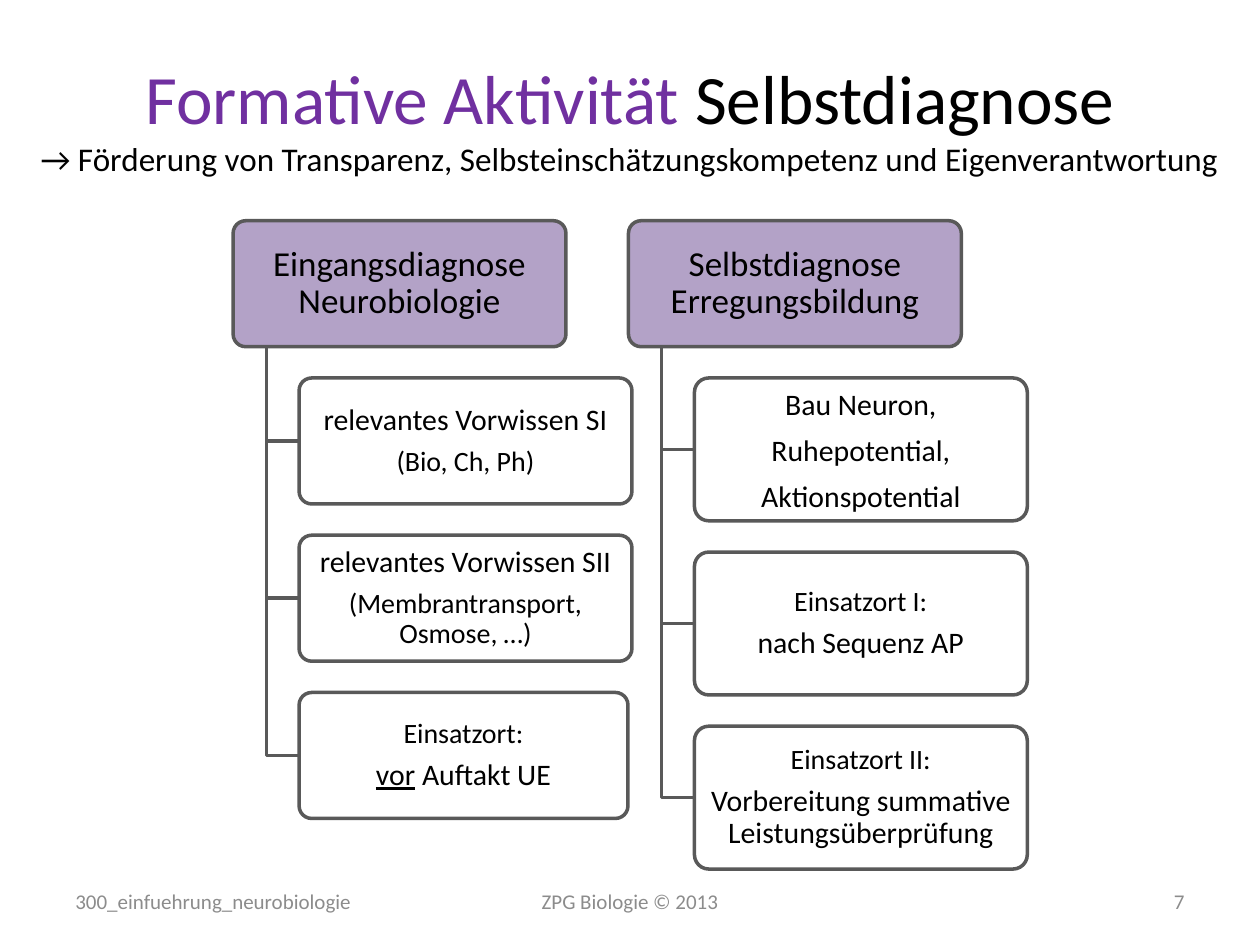
from dataclasses import dataclass
from typing import Optional

from lxml import etree
from pptx import Presentation
from pptx import util as u
from pptx.dml.color import RGBColor
from pptx.enum import shapes, text
from pptx.oxml.ns import qn


@dataclass(frozen=True)
class Theme:
    font: str = "Calibri"
    accent: RGBColor = RGBColor(0x70, 0x30, 0xA0)
    ink: RGBColor = RGBColor(0, 0, 0)
    white: RGBColor = RGBColor(0xFF, 0xFF, 0xFF)
    header_fill: RGBColor = RGBColor(0xB3, 0xA2, 0xC7)
    outline: RGBColor = RGBColor(0x59, 0x59, 0x59)
    footer: RGBColor = RGBColor(0x8C, 0x8C, 0x8C)
    title_size: float = 39.6
    subtitle_size: float = 18.9
    header_size: float = 20
    main_size: float = 17
    detail_size: float = 16
    footer_size: float = 12


THEME = Theme()


@dataclass(frozen=True)
class Line:
    words: str
    size: float = THEME.main_size
    underlined: str = ""  # leading words that are underlined


@dataclass(frozen=True)
class Item:
    lines: list[Line]
    width: float = 6.71
    line_spacing: Optional[float] = 0.9


@dataclass(frozen=True)
class Branch:
    left: float
    header: str
    item_height: float
    items: list[Item]


@dataclass(frozen=True)
class Footer:
    words: str
    left: float
    width: float
    alignment: text.PP_ALIGN


# Diagram grid in centimetres
TOP, HEADER_WIDTH, HEADER_HEIGHT = 4.45, 6.71, 2.54
GAP, TRUNK_OFFSET, ITEM_OFFSET = 0.63, 0.67, 1.33

BRANCHES = [
    Branch(4.7, "Eingangsdiagnose Neurobiologie", 2.54, [
        Item([Line("relevantes Vorwissen SI"),
              Line("(Bio, Ch, Ph)", THEME.detail_size)]),
        Item([Line("relevantes Vorwissen SII"),
              Line("(Membrantransport, Osmose, …)", THEME.detail_size)]),
        Item([Line("Einsatzort:", THEME.detail_size),
              Line(" Auftakt UE", underlined="vor")], width=6.63),
    ]),
    Branch(12.67, "Selbstdiagnose Erregungsbildung", 2.88, [
        Item([Line("Bau Neuron,"), Line("Ruhepotential,"),
              Line("Aktionspotential")], line_spacing=None),
        Item([Line("Einsatzort I:", THEME.detail_size),
              Line("nach Sequenz AP")]),
        Item([Line("Einsatzort II:", THEME.detail_size),
              Line("Vorbereitung summative Leistungsüberprüfung")]),
    ]),
]

FOOTERS = [
    Footer("300_einfuehrung_neurobiologie", 1.27, 6.22, text.PP_ALIGN.LEFT),
    Footer("ZPG Biologie © 2013", 8.68, 8.04, text.PP_ALIGN.CENTER),
    Footer("7", 18.2, 5.93, text.PP_ALIGN.RIGHT),
]


def style_font(font, size: float, color: RGBColor) -> None:
    font.name, font.size = THEME.font, u.Pt(size)
    font.color.rgb = color


def style_outline(shape) -> None:
    shape.shadow.inherit = False
    shape.line.color.rgb = THEME.outline
    shape.line.width = u.Pt(2)


def add_title(slide) -> None:
    title = slide.shapes.title
    title.left, title.top = u.Cm(0), u.Cm(0.76)
    title.width, title.height = u.Cm(25.4), u.Cm(3.18)
    frame = title.text_frame
    frame.auto_size = text.MSO_AUTO_SIZE.NONE
    frame.vertical_anchor = text.MSO_ANCHOR.MIDDLE
    paragraph = frame.paragraphs[0]
    paragraph.alignment = text.PP_ALIGN.CENTER
    for words, size, color, breaks in (
        ("Formative Aktivität ", THEME.title_size, THEME.accent, False),
        ("Selbstdiagnose", THEME.title_size, THEME.ink, True),
        ("→ Förderung von Transparenz, Selbsteinschätzungskompetenz "
         "und Eigenverantwortung", THEME.subtitle_size, THEME.ink, False),
    ):
        run = paragraph.add_run()
        run.text = words
        style_font(run.font, size, color)
        if breaks:
            paragraph.add_line_break()


def add_box(slide, left: float, top: float, width: float, height: float,
            fill: RGBColor, lines: list[Line], line_spacing: Optional[float],
            opacity: int = 100) -> None:
    box = slide.shapes.add_shape(
        shapes.MSO_SHAPE.ROUNDED_RECTANGLE,
        u.Cm(left), u.Cm(top), u.Cm(width), u.Cm(height))
    box.adjustments[0] = 0.1
    style_outline(box)
    box.fill.solid()
    box.fill.fore_color.rgb = fill
    if opacity < 100:
        color = box.fill._xPr.find(qn("a:solidFill"))[0]
        etree.SubElement(color, qn("a:alpha"), val=str(opacity * 1000))

    frame = box.text_frame
    frame.word_wrap = True
    frame.vertical_anchor = text.MSO_ANCHOR.MIDDLE
    frame.margin_left = frame.margin_right = u.Cm(0.09)
    frame.margin_top = frame.margin_bottom = u.Cm(0.06)
    for index, line in enumerate(lines):
        paragraph = frame.add_paragraph() if index else frame.paragraphs[0]
        paragraph.alignment = text.PP_ALIGN.CENTER
        paragraph.line_spacing = line_spacing
        if index < len(lines) - 1:
            paragraph.space_after = u.Pt(6)
        style_font(paragraph.font, line.size, THEME.ink)
        if line.underlined:
            run = paragraph.add_run()
            run.text = line.underlined
            run.font.underline = True
        paragraph.add_run().text = line.words


def add_elbow(slide, left: float, top: float, right: float, bottom: float) -> None:
    builder = slide.shapes.build_freeform(u.Cm(left), u.Cm(top))
    builder.add_line_segments(
        [(u.Cm(left), u.Cm(bottom)), (u.Cm(right), u.Cm(bottom))], close=False)
    elbow = builder.convert_to_shape()
    elbow.fill.background()
    style_outline(elbow)


def add_branch(slide, branch: Branch) -> None:
    add_box(slide, branch.left, TOP, HEADER_WIDTH, HEADER_HEIGHT,
            THEME.header_fill, [Line(branch.header, THEME.header_size)], 0.9)
    header_bottom = TOP + HEADER_HEIGHT
    item_left = branch.left + ITEM_OFFSET
    for index, item in enumerate(branch.items):
        top = header_bottom + GAP + index * (branch.item_height + GAP)
        add_elbow(slide, branch.left + TRUNK_OFFSET, header_bottom,
                  item_left, top + branch.item_height / 2)
        add_box(slide, item_left, top, item.width, branch.item_height,
                THEME.white, item.lines, item.line_spacing, opacity=90)


def add_footer(slide, footer: Footer) -> None:
    box = slide.shapes.add_textbox(
        u.Cm(footer.left), u.Cm(17.66), u.Cm(footer.width), u.Cm(1.01))
    frame = box.text_frame
    frame.word_wrap = True
    frame.vertical_anchor = text.MSO_ANCHOR.MIDDLE
    paragraph = frame.paragraphs[0]
    paragraph.text = footer.words
    paragraph.alignment = footer.alignment
    style_font(paragraph.font, THEME.footer_size, THEME.footer)


def main() -> None:
    presentation = Presentation()
    presentation.slide_width, presentation.slide_height = u.Cm(25.4), u.Cm(19.05)
    slide = presentation.slides.add_slide(presentation.slide_layouts[5])
    add_title(slide)
    for branch in BRANCHES:
        add_branch(slide, branch)
    for footer in FOOTERS:
        add_footer(slide, footer)
    presentation.save("out.pptx")


if __name__ == "__main__":
    main()
